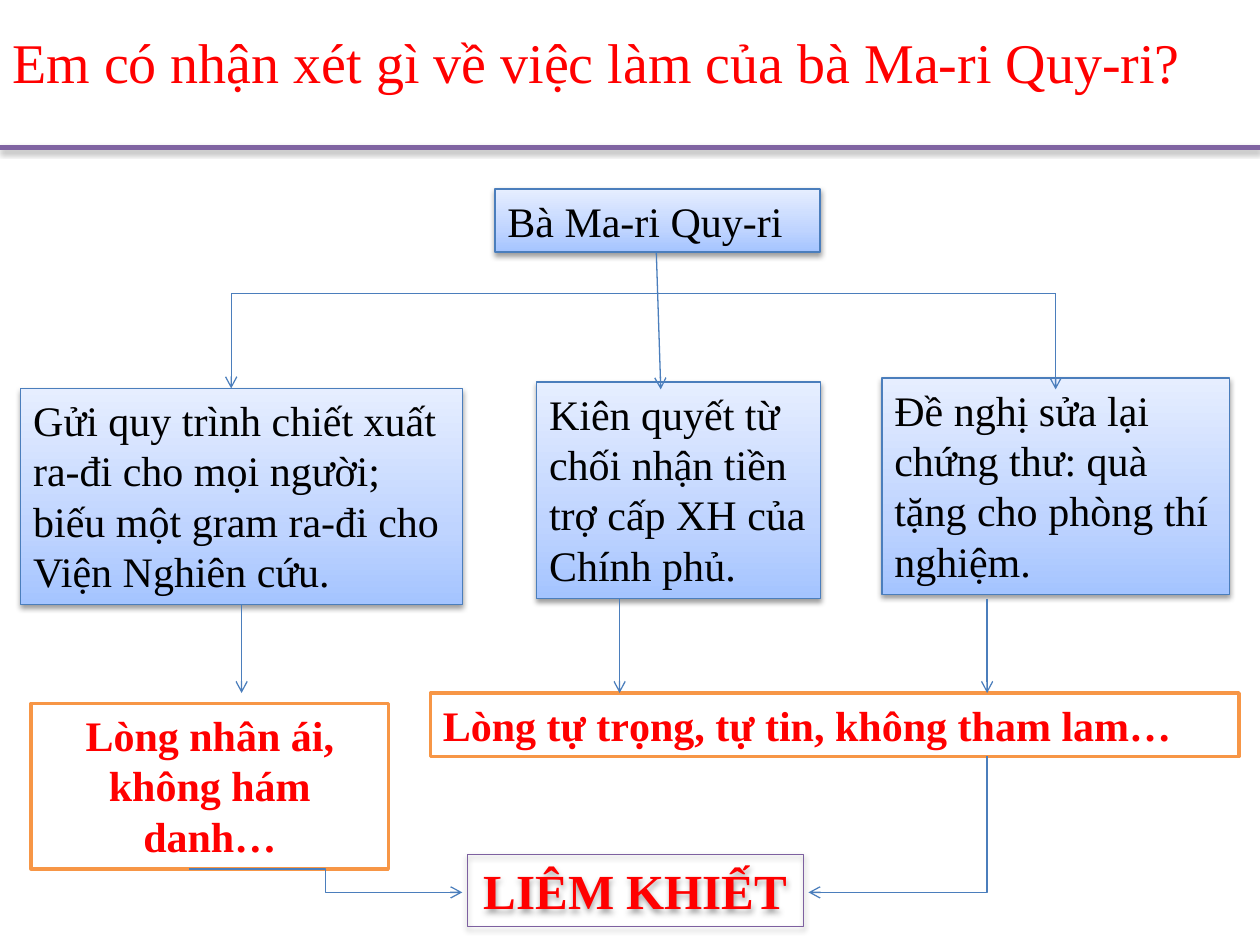
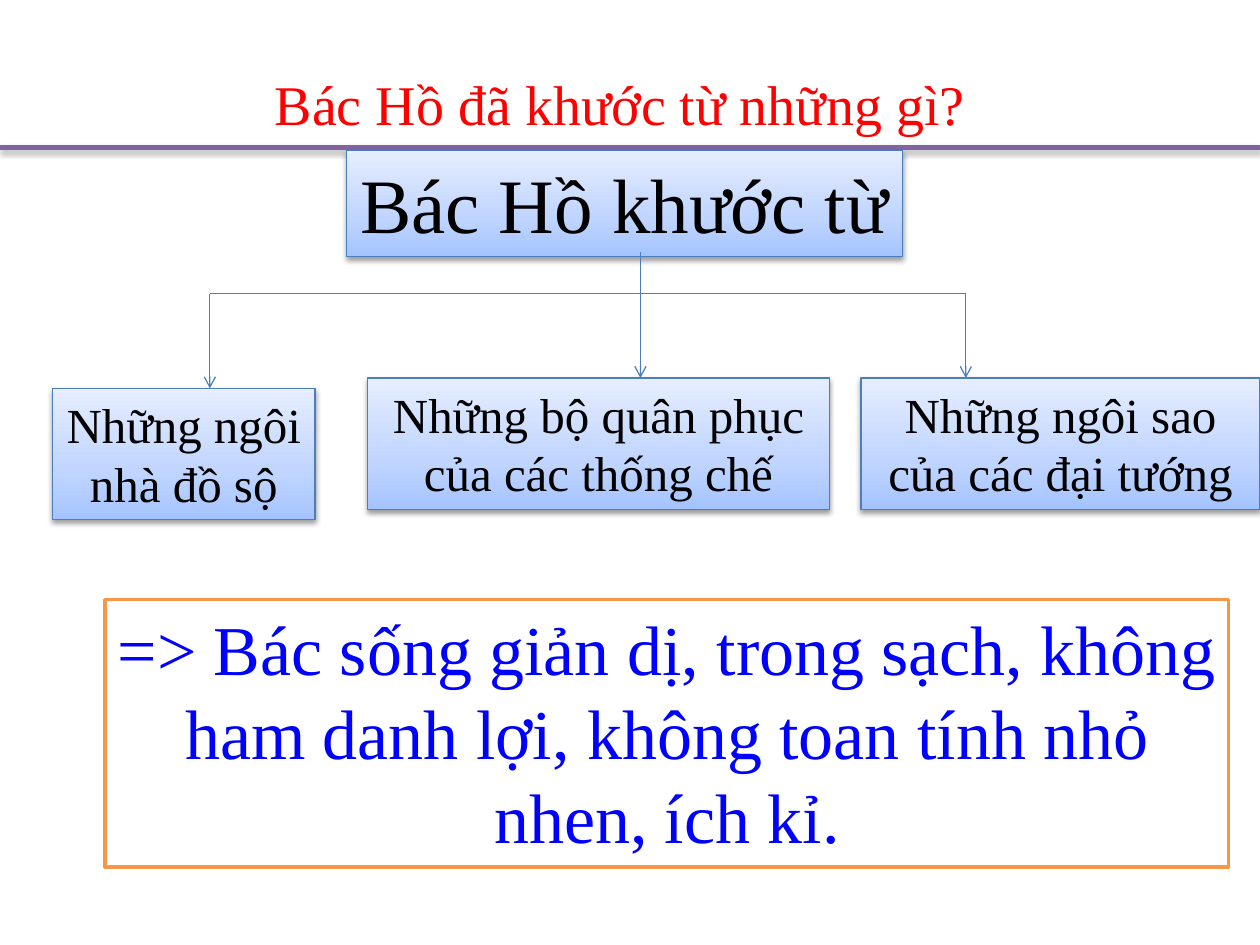
from lxml import etree
from pptx import Presentation
from pptx.dml.color import RGBColor
from pptx.enum.shapes import MSO_CONNECTOR, MSO_SHAPE
from pptx.enum.text import MSO_ANCHOR, PP_ALIGN
from pptx.oxml import parse_xml
from pptx.oxml.ns import nsdecls, qn
from pptx.util import Cm, Pt

FONT = "Times New Roman"
COLORS = {
    "black": "000000", "red": "FF0000", "blue": "0000FF", "white": "FFFFFF",
    "band": "8064A2", "flow": "4B7EBC", "orange": "F79646", "purple": "7D60A0",
}
GRADIENT = ((0, "A4C4FF"), (35, "BFD4FF"), (100, "E6EEFF"))
LEFT, CENTER = PP_ALIGN.LEFT, PP_ALIGN.CENTER
SLIDE_WIDTH, SLIDE_HEIGHT = 25.4, 19.05
BAND_Y, BRANCH_Y = 2.97, 5.92

# Box styles: fill is "gradient", a colour name or None; shadow is opacity in %
STYLES = {
    "topic": {"fill": "gradient", "line": "flow", "width": 0.75, "shadow": 38},
    "virtue": {"fill": "white", "line": "orange", "width": 2, "shadow": None},
    "conclusion": {"fill": None, "line": "purple", "width": 0.75, "shadow": 35},
}

# Content; all places and lengths are in centimetres
SLIDES = [
    {
        "title": ("Em có nhận xét gì về việc làm của bà Ma-ri Quy-ri?", (0, 0.43, 25.6, 1.63)),
        # text, style, (left, top, width, height), alignment, font format
        "boxes": [
            ("Bà Ma-ri Quy-ri", "topic", (9.98, 3.81, 6.55, 1.27), LEFT, {"size": 24}),
            ("Gửi quy trình chiết xuất ra-đi cho mọi người; biếu một gram ra-đi cho Viện Nghiên cứu.",
             "topic", (0.42, 7.83, 8.9, 4.36), LEFT, {"size": 24}),
            ("Kiên quyết từ chối nhận tiền trợ cấp XH của Chính phủ.",
             "topic", (10.82, 7.7, 5.72, 4.36), LEFT, {"size": 24}),
            ("Đề nghị sửa lại chứng thư: quà tặng cho phòng thí nghiệm.",
             "topic", (17.78, 7.62, 7, 4.36), LEFT, {"size": 24}),
            ("Lòng nhân ái, không hám danh…", "virtue", (0.63, 14.18, 7.2, 3.34), CENTER,
             {"size": 24, "bold": True, "color": "red"}),
            ("Lòng tự trọng, tự tin, không tham lam…", "virtue", (8.68, 13.97, 16.3, 1.28), LEFT,
             {"size": 24, "bold": True, "color": "red"}),
            ("LIÊM KHIẾT", "conclusion", (9.42, 17.23, 6.78, 1.45), CENTER,
             {"size": 28, "bold": True, "color": "red", "wrap": False}),
        ],
        "branches": (4.66, 21.28),
        "arrows": [
            (21.28, BRANCH_Y, 21.28, 7.85), (13.23, 5.08, 13.32, 7.85),
            (4.66, BRANCH_Y, 4.66, 7.83), (19.9, 12.07, 19.9, 13.97),
            (12.49, 12.07, 12.49, 13.97), (4.87, 12.19, 4.87, 13.97),
        ],
        # (from x, from y, to x, to y), place of the bend in % of the width
        "elbows": [((3.81, 17.52, 9.32, 17.99), 50), ((19.9, 15.25, 16.3, 17.99), 0)],
    },
    {
        "title": ("Bác Hồ đã khước từ những gì?", (5.29, 1.27, 14.6, 1.63)),
        "boxes": [
            ("Bác Hồ khước từ", "topic", (6.98, 3.03, 11.22, 2.14), CENTER, {"size": 44, "wrap": False}),
            ("Những ngôi nhà đồ sộ", "topic", (1.06, 7.83, 5.29, 2.65), CENTER, {"size": 28}),
            ("Những bộ quân phục của các thống chế", "topic", (7.41, 7.62, 9.31, 2.65), CENTER, {"size": 28}),
            ("Những ngôi sao của các đại tướng", "topic", (17.36, 7.62, 8.04, 2.65), CENTER, {"size": 28}),
            ("=> Bác sống giản dị, trong sạch, không ham danh lợi, không toan tính nhỏ nhen, ích kỉ.",
             "virtue", (2.12, 12.09, 22.65, 5.39), CENTER, {"size": 40, "color": "blue"}),
        ],
        "branches": (4.23, 19.47),
        "arrows": [
            (19.47, BRANCH_Y, 19.47, 7.62), (12.91, 5.08, 12.91, 7.62),
            (4.23, BRANCH_Y, 4.23, 7.83),
        ],
        "elbows": [],
    },
]


def rgb(name):
    return RGBColor.from_string(COLORS[name])


def add_shadow(owner, opacity):
    """Soft shadow below the element, or none when opacity is empty."""
    effects = etree.SubElement(owner._element.spPr, qn("a:effectLst"))
    if opacity:
        effects.append(parse_xml(
            f'<a:outerShdw {nsdecls("a")} blurRad="40000" dist="22000" dir="5400000" rotWithShape="0">'
            f'<a:srgbClr val="000000"><a:alpha val="{opacity * 1000}"/></a:srgbClr></a:outerShdw>'))


def fill_gradient(box):
    stops = "".join(f'<a:gs pos="{pos * 1000}"><a:srgbClr val="{color}"/></a:gs>'
                    for pos, color in GRADIENT)
    box._element.spPr.find(qn("a:prstGeom")).addnext(parse_xml(
        f'<a:gradFill {nsdecls("a")} rotWithShape="1"><a:gsLst>{stops}</a:gsLst>'
        '<a:lin ang="16200000" scaled="0"/></a:gradFill>'))


def write(holder, text, align, size, bold=False, color="black", wrap=True):
    frame = holder.text_frame
    frame.word_wrap = wrap
    frame.vertical_anchor = MSO_ANCHOR.TOP
    paragraph = frame.paragraphs[0]
    paragraph.alignment = align
    run = paragraph.add_run()
    run.text = text
    for name, value in {"name": FONT, "size": Pt(size), "bold": bold}.items():
        setattr(run.font, name, value)
    run.font.color.rgb = rgb(color)


def add_box(slide, text, style_name, place, align, font_format):
    style = STYLES[style_name]
    box = slide.shapes.add_shape(MSO_SHAPE.RECTANGLE, *map(Cm, place))
    if style["fill"] == "gradient":
        fill_gradient(box)
    elif style["fill"]:
        box.fill.solid()
        box.fill.fore_color.rgb = rgb(style["fill"])
    else:
        box.fill.background()
    box.line.color.rgb = rgb(style["line"])
    box.line.width = Pt(style["width"])
    add_shadow(box, style["shadow"])
    write(box, text, align, **font_format)


def add_line(slide, ends, color="flow", width=0.75, arrow=True, bend=None, shadow=None):
    kind = MSO_CONNECTOR.STRAIGHT if bend is None else MSO_CONNECTOR.ELBOW
    link = slide.shapes.add_connector(kind, *map(Cm, ends))
    link.line.color.rgb = rgb(color)
    link.line.width = Pt(width)
    if arrow:
        etree.SubElement(link.line._get_or_add_ln(), qn("a:tailEnd"), type="arrow")
    if bend is not None:
        guides = link._element.spPr.find(qn("a:prstGeom")).find(qn("a:avLst"))
        etree.SubElement(guides, qn("a:gd"), name="adj1", fmla=f"val {bend * 1000}")
    add_shadow(link, shadow)


def build_slide(deck, content):
    slide = deck.slides.add_slide(deck.slide_layouts[6])
    # Band under the title
    add_line(slide, (0, BAND_Y, SLIDE_WIDTH, BAND_Y), "band", 3, arrow=False, shadow=35)
    for box in content["boxes"]:
        add_box(slide, *box)
    # Branching line and arrows
    first, last = content["branches"]
    add_line(slide, (first, BRANCH_Y, last, BRANCH_Y), arrow=False)
    for ends in content["arrows"]:
        add_line(slide, ends)
    for ends, bend in content["elbows"]:
        add_line(slide, ends, bend=bend)
    # Title
    question, place = content["title"]
    write(slide.shapes.add_textbox(*map(Cm, place)), question, LEFT, 32, color="red")


def main():
    deck = Presentation()
    deck.slide_width, deck.slide_height = Cm(SLIDE_WIDTH), Cm(SLIDE_HEIGHT)
    for content in SLIDES:
        build_slide(deck, content)
    deck.save("out.pptx")


if __name__ == "__main__":
    main()
